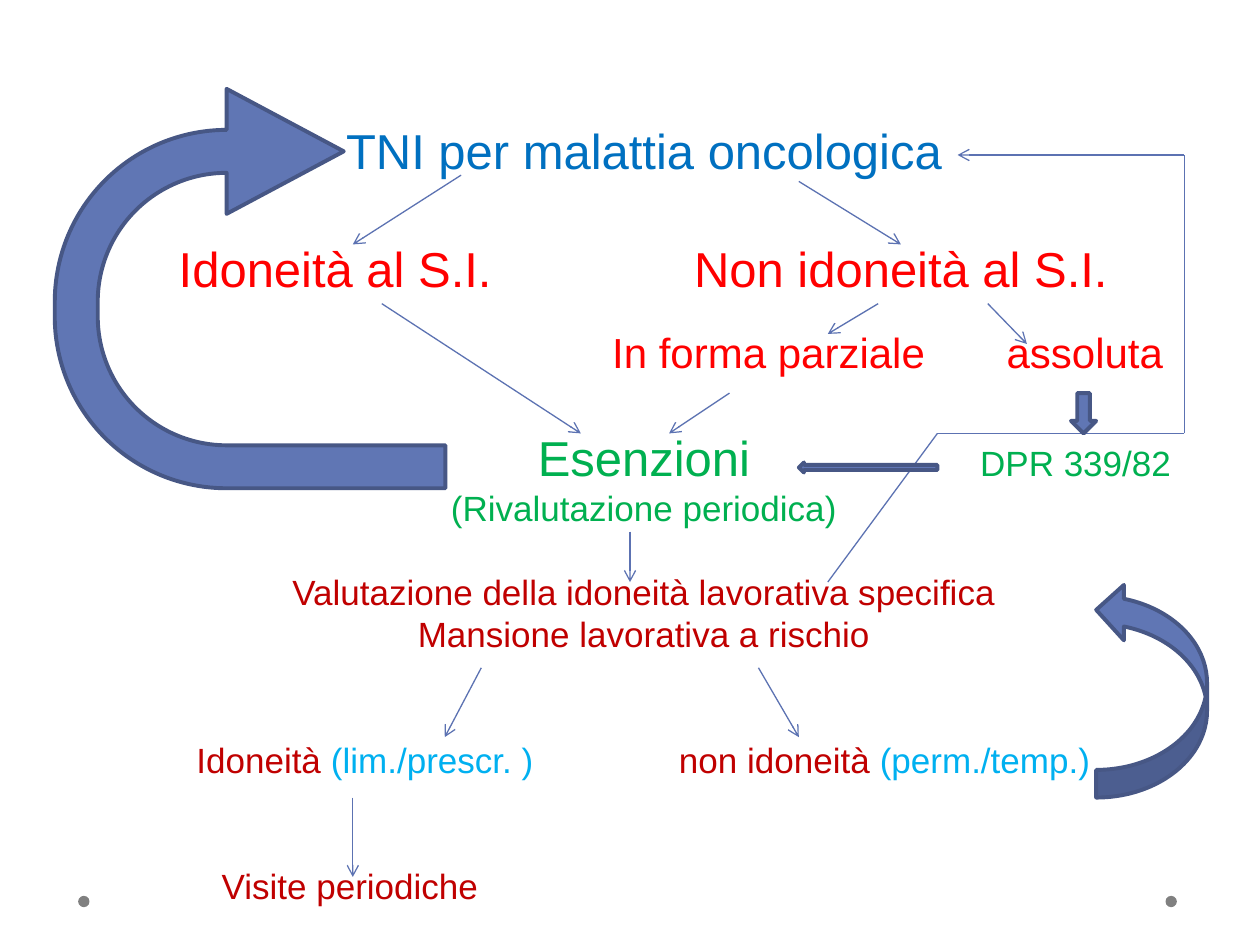
"""Build the flow chart of fitness assessment after an oncological disease."""
from lxml import etree
from pptx import Presentation
from pptx.dml.color import RGBColor
from pptx.enum.shapes import MSO_CONNECTOR, MSO_SHAPE
from pptx.enum.text import PP_ALIGN
from pptx.oxml.ns import qn
from pptx.util import Inches, Pt

STRAIGHT = MSO_CONNECTOR.STRAIGHT
OVAL, UTURN, CURVED = MSO_SHAPE.OVAL, MSO_SHAPE.U_TURN_ARROW, MSO_SHAPE.CURVED_RIGHT_ARROW
DOWN, RIGHT = MSO_SHAPE.DOWN_ARROW, MSO_SHAPE.RIGHT_ARROW
CENTER, LEFT = PP_ALIGN.CENTER, PP_ALIGN.LEFT

BLUE = RGBColor(0x00, 0x70, 0xC0)
RED = RGBColor(0xFF, 0x00, 0x00)
GREEN = RGBColor(0x00, 0xB0, 0x50)
DARK_RED = RGBColor(0xC0, 0x00, 0x00)
SKY = RGBColor(0x00, 0xB0, 0xF0)
GREY = RGBColor(0x80, 0x80, 0x80)
LINE = RGBColor(0x5C, 0x72, 0xB2)
ARROW_FILL = RGBColor(0x60, 0x76, 0xB4)
ARROW_EDGE = RGBColor(0x47, 0x57, 0x85)

deck = Presentation()
deck.slide_width, deck.slide_height = Inches(10), Inches(7.5)
page = deck.slides.add_slide(deck.slide_layouts[6])
COLUMN, ROW = deck.slide_width / 100, deck.slide_height / 75


def grid(*values):
    """Turn alternating columns and rows into lengths."""
    return [round(value * (ROW if i % 2 else COLUMN)) for i, value in enumerate(values)]


def add_figure(kind, place, fill, edge=None, turn=0, adjustments=()):
    """Add a filled shape, optionally outlined and turned."""
    shape = page.shapes.add_shape(kind, *grid(*place))
    shape.shadow.inherit = False
    shape.rotation = turn
    shape.fill.solid()
    shape.fill.fore_color.rgb = fill
    if edge is None:
        shape.line.fill.background()
    else:
        shape.line.color.rgb = edge
        shape.line.width = Pt(2.25)
    for i, value in enumerate(adjustments):
        shape.adjustments[i] = value


for dot_left in (6.2, 92.5):
    add_figure(OVAL, (dot_left, 71.1, 0.9, 0.9), GREY)

# space before, tab stops in columns from the text edge, runs of text, size, colour
PARAGRAPHS = [
    (0, (), [("TNI per malattia oncologica", 28, BLUE)]),
    (33.6, (5, 45.9), [("\tIdoneità al S.I.\tNon idoneità al S.I.", 28, RED)]),
    (16.8, (39.4, 70.7), [("\tIn forma parziale\tassoluta", 24, RED)]),
    (28.8, (33.5, 68.6), [("\tEsenzioni", 28, GREEN), ("\tDPR 339/82", 20, GREEN)]),
    (0, (), [("(Rivalutazione periodica)", 20, GREEN)]),
    (24, (), [("Valutazione della idoneità lavorativa specifica", 20, DARK_RED)]),
    (0, (), [("Mansione lavorativa a rischio", 20, DARK_RED)]),
    (48, (6.4, 44.7), [("\tIdoneità ", 20, DARK_RED), ("(lim./prescr. )", 20, SKY),
                       ("\tnon idoneità ", 20, DARK_RED), ("(perm./temp.)", 20, SKY)]),
    (48, (8.4,), [("\tVisite periodiche", 20, DARK_RED)]),
]
box = page.shapes.add_textbox(*grid(8.2, 9.1, 85.8, 69.3))
frame = box.text_frame
frame.word_wrap = True
for i, (gap, stops, spans) in enumerate(PARAGRAPHS):
    para = frame.add_paragraph() if i else frame.paragraphs[0]
    para.alignment = LEFT if stops else CENTER
    if gap:
        para.space_before = Pt(gap)
    if stops:
        tabs = etree.SubElement(para._p.get_or_add_pPr(), qn("a:tabLst"))
        for stop in stops:
            etree.SubElement(tabs, qn("a:tab"), pos=str(round(stop * COLUMN)), algn="l")
    for text, size, color in spans:
        span = para.add_run()
        span.text = text
        for name, value in {"name": "Arial", "size": Pt(size)}.items():
            setattr(span.font, name, value)
        span.font.color.rgb = color

LINKS = [
    (36.6, 13.9, 28, 19.4, True),
    (63.4, 14.4, 71.5, 19.4, True),
    (69.7, 24.1, 65.7, 26.5, True),
    (78.4, 24.1, 81.5, 27.3, True),
    (30.3, 24.1, 46.1, 34.4, True),
    (57.9, 31.2, 53.1, 34.4, True),
    (38.2, 53, 35.3, 58.5, True),
    (28, 63.3, 28, 69.6, True),
    (50, 42.2, 50, 46.2, True),
    (60.2, 53, 63.4, 58.5, True),
    (65.7, 46.2, 74.4, 34.4, False),
    (74.4, 34.4, 94, 34.4, False),
    (94, 34.4, 94, 12.3, False),
    (94, 12.3, 76, 12.3, True),
]
for *ends, pointed in LINKS:
    link = page.shapes.add_connector(STRAIGHT, *grid(*ends))
    link.line.color.rgb = LINE
    link.line.width = Pt(0.75)
    if pointed:
        etree.SubElement(link.line._get_or_add_ln(), qn("a:tailEnd"), type="arrow")
    etree.SubElement(link._element.spPr, qn("a:effectLst"))

BLOCK_ARROWS = [
    (UTURN, (4, 7.4, 31.7, 31), 270, (0.11, 0.16, 0.3, 0.44, 0.74)),
    (CURVED, (87, 46.2, 8.8, 17.1), 180, ()),
    (DOWN, (85, 31.2, 2, 3.2), 0, ()),
    (RIGHT, (63.4, 36.7, 11, 0.8), 180, ()),
]
for kind, place, turn, adjustments in BLOCK_ARROWS:
    add_figure(kind, place, ARROW_FILL, ARROW_EDGE, turn, adjustments)

deck.save("out.pptx")
